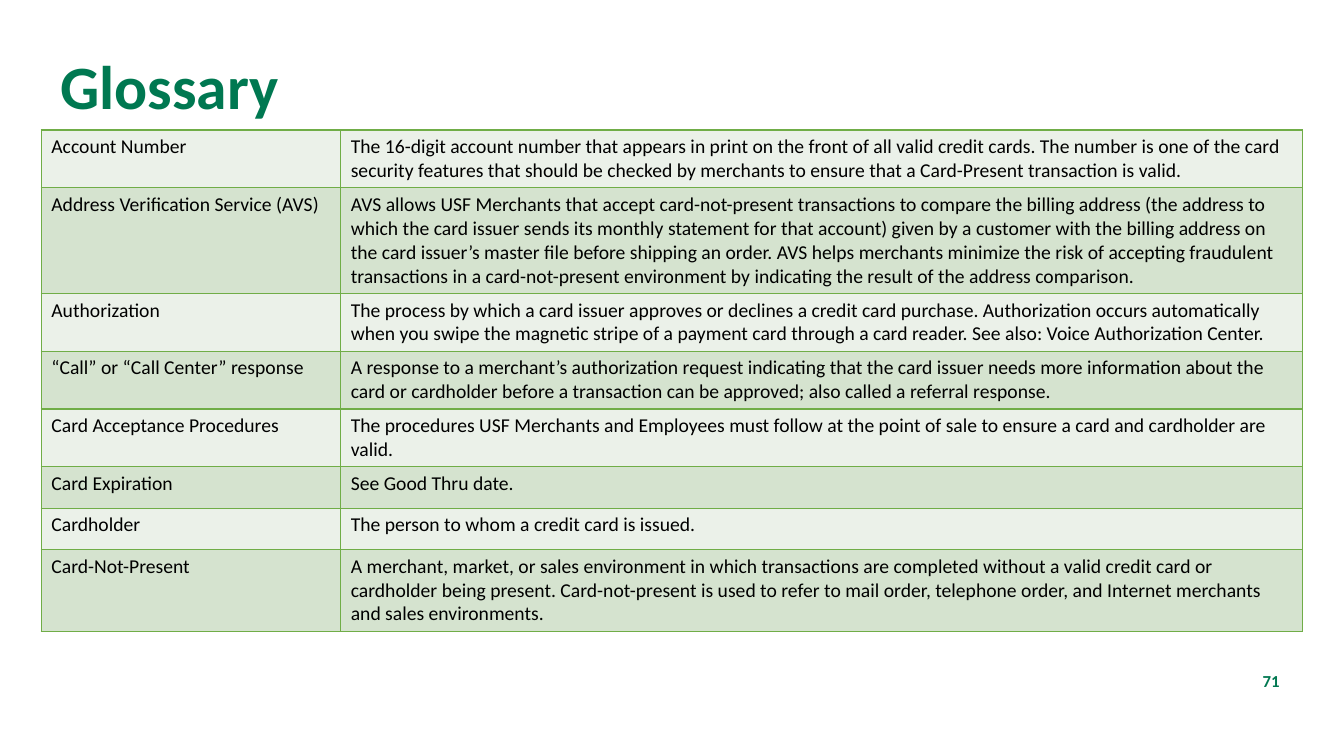
import lxml.etree
import pptx
import pptx.dml.color
import pptx.enum.text
import pptx.oxml.ns
import pptx.util

Inches = pptx.util.Inches
GREEN = "007851"
BORDER = "70AD47"
BANDS = ("EBF1E9", "D5E3CF")
GLOSSARY = [
    ("Account Number",
     "The 16-digit account number that appears in print on the front of all valid credit cards. "
     "The number is one of the card security features that should be checked by merchants to "
     "ensure that a Card-Present transaction is valid."),
    ("Address Verification Service (AVS)",
     "AVS allows USF Merchants that accept card-not-present transactions to compare the billing "
     "address (the address to which the card issuer sends its monthly statement for that account) "
     "given by a customer with the billing address on the card issuer’s master file before "
     "shipping an order. AVS helps merchants minimize the risk of accepting fraudulent "
     "transactions in a card-not-present environment by indicating the result of the address "
     "comparison."),
    ("Authorization",
     "The process by which a card issuer approves or declines a credit card purchase. "
     "Authorization occurs automatically when you swipe the magnetic stripe of a payment card "
     "through a card reader. See also: Voice Authorization Center."),
    ("“Call” or “Call Center” response",
     "A response to a merchant’s authorization request indicating that the card issuer needs more "
     "information about the card or cardholder before a transaction can be approved; also called "
     "a referral response."),
    ("Card Acceptance Procedures",
     "The procedures USF Merchants and Employees must follow at the point of sale to ensure a "
     "card and cardholder are valid."),
    ("Card Expiration", "See Good Thru date."),
    ("Cardholder", "The person to whom a credit card is issued."),
    ("Card-Not-Present",
     "A merchant, market, or sales environment in which transactions are completed without a "
     "valid credit card or cardholder being present. Card-not-present is used to refer to mail "
     "order, telephone order, and Internet merchants and sales environments."),
]


def color(hex_code):
    """Return the RGB colour for a hex string."""
    return pptx.dml.color.RGBColor.from_string(hex_code)


def add_run(paragraph, text, size, hex_code, bold=False):
    """Add one formatted run to a paragraph."""
    run = paragraph.add_run()
    run.text = text
    run.font.name = "Calibri"
    run.font.size = pptx.util.Pt(size)
    run.font.bold = bold
    run.font.color.rgb = color(hex_code)


def set_borders(cell, hex_code, points):
    """Draw a solid line on all four sides of a cell."""
    qn = pptx.oxml.ns.qn
    properties = cell._tc.get_or_add_tcPr()
    for side in ("a:lnL", "a:lnR", "a:lnT", "a:lnB"):
        line = lxml.etree.SubElement(properties, qn(side), w=str(pptx.util.Pt(points)))
        fill = lxml.etree.SubElement(line, qn("a:solidFill"))
        lxml.etree.SubElement(fill, qn("a:srgbClr"), val=hex_code)


def place_heading(slide, left, top, width, height):
    """Fill the title placeholder and move it to the given box."""
    heading = slide.shapes.title
    heading.left, heading.top = Inches(left), Inches(top)
    heading.width, heading.height = Inches(width), Inches(height)
    frame = heading.text_frame
    frame.word_wrap = True
    frame.vertical_anchor = pptx.enum.text.MSO_ANCHOR.MIDDLE
    paragraph = frame.paragraphs[0]
    paragraph.alignment = pptx.enum.text.PP_ALIGN.LEFT
    paragraph.line_spacing = 0.9
    add_run(paragraph, "Glossary", 44, GREEN, bold=True)


def place_glossary(slide, left, top, width, term_width, row_height):
    """Add the table of terms and definitions with alternating row fills."""
    glossary = slide.shapes.add_table(
        len(GLOSSARY), 2, Inches(left), Inches(top), Inches(width),
        Inches(row_height * len(GLOSSARY))).table
    glossary.columns[0].width = Inches(term_width)
    glossary.columns[1].width = Inches(width - term_width)
    for row, entry in enumerate(GLOSSARY):
        glossary.rows[row].height = Inches(row_height)
        for column, text in enumerate(entry):
            cell = glossary.cell(row, column)
            set_borders(cell, BORDER, 1)
            cell.fill.solid()
            cell.fill.fore_color.rgb = color(BANDS[row % 2])
            add_run(cell.text_frame.paragraphs[0], text, 14, "000000")


def place_page_number(slide, left, top, width, height):
    """Add the right-aligned page number in the given box."""
    page_number = slide.shapes.add_textbox(
        Inches(left), Inches(top), Inches(width), Inches(height))
    frame = page_number.text_frame
    frame.word_wrap = True
    frame.vertical_anchor = pptx.enum.text.MSO_ANCHOR.MIDDLE
    frame.paragraphs[0].alignment = pptx.enum.text.PP_ALIGN.RIGHT
    add_run(frame.paragraphs[0], "71", 12, GREEN, bold=True)


def main():
    """Build the glossary slide and save it."""
    deck = pptx.Presentation()
    deck.slide_width, deck.slide_height = Inches(13.33), Inches(7.5)
    slide = deck.slides.add_slide(deck.slide_layouts[5])
    place_heading(slide, 0.5, 0.46, 12.29, 0.85)
    place_glossary(slide, 0.41, 1.29, 12.51, 2.97, 0.41)
    place_page_number(slide, 11.86, 6.61, 0.93, 0.29)
    deck.save("out.pptx")


if __name__ == "__main__":
    main()
